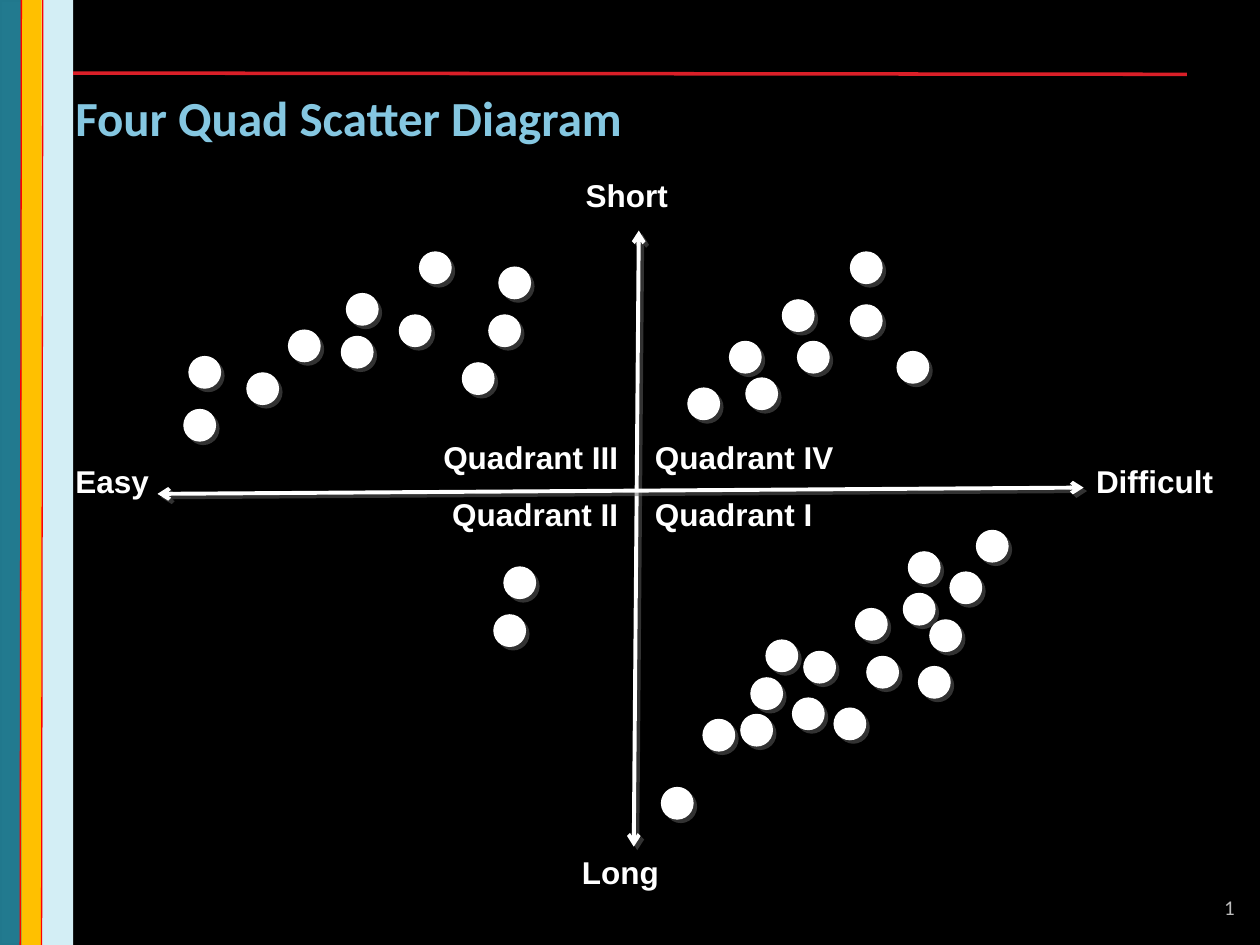
"""Build a slide with a four quadrant scatter diagram."""
from dataclasses import dataclass

from lxml import etree
from pptx import Presentation
from pptx.dml.color import RGBColor
from pptx.enum.shapes import MSO_CONNECTOR, MSO_SHAPE
from pptx.enum.text import MSO_ANCHOR, MSO_AUTO_SIZE, PP_ALIGN
from pptx.oxml.ns import qn
from pptx.util import Inches, Pt

STRAIGHT = MSO_CONNECTOR.STRAIGHT
OVAL, RECT = MSO_SHAPE.OVAL, MSO_SHAPE.RECTANGLE
TOP, MIDDLE, BOTTOM = MSO_ANCHOR.TOP, MSO_ANCHOR.MIDDLE, MSO_ANCHOR.BOTTOM
GROW, FIXED = MSO_AUTO_SIZE.SHAPE_TO_FIT_TEXT, MSO_AUTO_SIZE.NONE
LEFT, RIGHT = PP_ALIGN.LEFT, PP_ALIGN.RIGHT


@dataclass(frozen=True)
class Theme:
    back: str = "000000"
    ink: str = "FFFFFF"
    title: str = "85C7E1"
    number: str = "BDBDBD"
    shade: str = "646464"
    teal: str = "227A8F"
    edge: str = "21788D"
    gold: str = "FFC000"
    pale: str = "D3EEF5"
    red: str = "FF0000"
    rule: str = "DA1F28"
    head: str = "Calibri"
    body: str = "Arial"
    title_size: int = 28
    label_size: int = 18
    number_size: int = 12


THEME = Theme()
DOT = 0.25
LABELS = [
    ("Long", 4.52, 6.72, 1.02, 0.5),
    ("Short", 4.55, 1.35, 1.08, 0.5),
    ("Easy", 0.5, 3.62, 0.99, 0.51),
    ("Difficult", 8.6, 3.62, 1.45, 0.51),
    ("Quadrant II", 3.49, 3.88, 1.53, 0.4),
    ("Quadrant I", 5.1, 3.88, 1.47, 0.4),
    ("Quadrant III", 3.42, 3.43, 1.6, 0.4),
    ("Quadrant IV", 5.1, 3.43, 1.63, 0.4),
]
DOTS = {
    "Quadrant I": [
        (6.38, 5.17), (6.08, 5.08), (6.79, 4.83), (7.17, 4.71), (7.21, 4.38),
        (7.54, 4.54), (7.75, 4.21), (5.96, 5.38), (6.62, 5.62), (7.29, 5.29),
        (6.88, 5.21), (6.29, 5.54), (5.88, 5.67), (5.58, 5.71), (7.38, 4.92),
        (5.25, 6.25)],
    "Quadrant IV": [
        (6.33, 2.71), (5.92, 3), (5.46, 3.08), (6.75, 2), (6.75, 2.42),
        (6.21, 2.38), (5.79, 2.71), (7.12, 2.79)],
    "Quadrant II": [(4, 4.5), (3.92, 4.88)],
    "Quadrant III": [
        (3.88, 2.5), (3.67, 2.88), (3.17, 2.5), (3.96, 2.12), (3.33, 2),
        (2.75, 2.33), (2.29, 2.62), (2.71, 2.67), (1.96, 2.96), (1.5, 2.83),
        (1.46, 3.25)],
}


def color(code):
    """Turn a hex code into a colour."""
    return RGBColor.from_string(code)


def add_shade(shape):
    """Give a shape a soft grey shadow to the lower right."""
    effects = etree.SubElement(shape._element.spPr, qn("a:effectLst"))
    shadow = etree.SubElement(effects, qn("a:outerShdw"), dist=str(Pt(2.8)),
                              dir="2700000", algn="ctr", rotWithShape="0")
    tint = etree.SubElement(shadow, qn("a:srgbClr"), val=THEME.shade)
    etree.SubElement(tint, qn("a:alpha"), val="50000")


def add_text(slide, text, box, font, size, ink, bold=False, anchor=TOP,
             align=LEFT, wrap=True, fit=FIXED, inset=0.1):
    """Add a one-line text box."""
    frame = slide.shapes.add_textbox(*map(Inches, box)).text_frame
    frame.word_wrap, frame.auto_size = wrap, fit
    frame.vertical_anchor = anchor
    frame.margin_left = frame.margin_right = Inches(inset)
    line = frame.paragraphs[0]
    line.text, line.alignment = text, align
    line.font.name, line.font.size, line.font.bold = font, Pt(size), bold
    line.font.color.rgb = color(ink)


def add_shape(slide, kind, box, fill, edge=None, width=0.75):
    """Add a filled shape with an optional outline."""
    shape = slide.shapes.add_shape(kind, *map(Inches, box))
    shape.fill.solid()
    shape.fill.fore_color.rgb = color(fill)
    if edge:
        shape.line.color.rgb = color(edge)
        shape.line.width = Pt(width)
    else:
        shape.line.fill.background()
    return shape


def add_line(slide, ends, ink, width):
    """Add a straight line."""
    line = slide.shapes.add_connector(STRAIGHT, *map(Inches, ends))
    line.line.color.rgb = color(ink)
    line.line.width = Pt(width)
    return line


def add_axis(slide, ends):
    """Add a shaded line with an arrowhead at both ends."""
    axis = add_line(slide, ends, THEME.ink, 2.25)
    stroke = axis.line._get_or_add_ln()
    for end in ("a:headEnd", "a:tailEnd"):
        etree.SubElement(stroke, qn(end), type="arrow")
    add_shade(axis)


def add_dot(slide, left, top):
    """Add one shaded data point."""
    add_shade(add_shape(slide, OVAL, (left, top, DOT, DOT), THEME.ink, THEME.ink))


def add_trim(slide):
    """Add the side bands and thin red rules."""
    bands = [(0, THEME.teal, THEME.edge), (0.17, THEME.gold, None),
             (0.33, THEME.pale, None)]
    for left, fill, edge in bands:
        band = add_shape(slide, RECT, (left, 0, 0.25, 7.5), fill, edge, 2)
        band.shadow.inherit = False
    rules = [((0.34, 0, 0.33, 7.5), THEME.red, 0.75),
             ((0.17, 0, 0.16, 7.5), THEME.red, 0.75),
             ((0.58, 0.58, 9.42, 0.59), THEME.rule, 2)]
    for ends, ink, width in rules:
        rule = add_line(slide, ends, ink, width)
        etree.SubElement(rule._element.spPr, qn("a:effectLst"))


def main():
    """Build and save the slide."""
    deck = Presentation()
    deck.slide_width, deck.slide_height = Inches(10), Inches(7.5)
    slide = deck.slides.add_slide(deck.slide_layouts[6])
    slide.background.fill.solid()
    slide.background.fill.fore_color.rgb = color(THEME.back)
    add_text(slide, "Four Quad Scatter Diagram", (0.5, 0.3, 9, 1.25),
             THEME.head, THEME.title_size, THEME.title, True, MIDDLE)
    add_text(slide, "1", (7.46, 6.95, 2.34, 0.4), THEME.head,
             THEME.number_size, THEME.number, anchor=BOTTOM, align=RIGHT, inset=0)
    add_axis(slide, (5.07, 1.83, 5.03, 6.72))
    add_axis(slide, (1.25, 3.92, 8.6, 3.87))
    for text, *box in LABELS:
        add_text(slide, text, box, THEME.body, THEME.label_size, THEME.ink,
                 True, wrap=False, fit=GROW)
    for group in DOTS.values():
        for left, top in group:
            add_dot(slide, left, top)
    add_trim(slide)
    deck.save("out.pptx")


if __name__ == "__main__":
    main()
